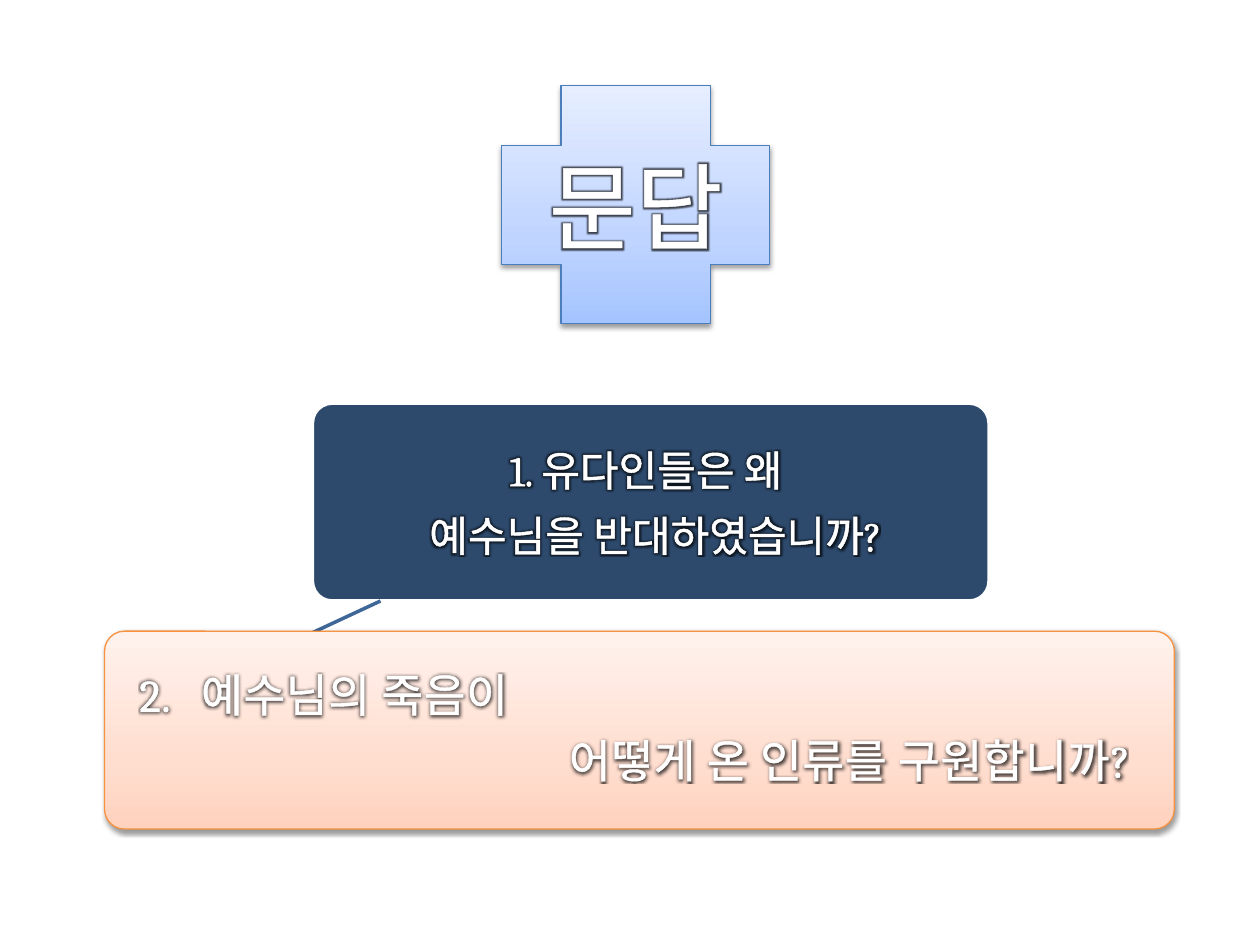
from dataclasses import dataclass

from lxml import etree
from pptx import Presentation
from pptx.dml.color import RGBColor
from pptx.enum import shapes, text
from pptx.oxml import ns
from pptx.util import Inches, Pt

COLORS = {
    "white": "FFFFFF", "black": "000000", "navy": "17375E", "link": "3F6797",
    "orange": "F69240", "blue": "4B7EBC",
}
PEACH = ((0, "FFD2BD"), (35, "FFDED0"), (100, "FFF2ED"))
SKY = ((0, "A4C4FF"), (35, "BFD4FF"), (100, "E6EEFF"))
FONT = "Cambria"
CENTER, LEFT = text.PP_ALIGN.CENTER, text.PP_ALIGN.LEFT


@dataclass(frozen=True)
class Line:
    words: str
    align: text.PP_ALIGN = CENTER
    left: float = 0
    hang: float = 0


@dataclass(frozen=True)
class Panel:
    preset: shapes.MSO_SHAPE
    place: tuple[float, float, float, float]
    border: str
    width: float
    size: float
    lines: tuple[Line, ...]
    stops: tuple[tuple[int, str], ...] = ()
    spacing: float = 1
    after: float = 0
    tracking: float = 0


FIRST = Panel(
    shapes.MSO_SHAPE.ROUNDED_RECTANGLE, (2.48, 3.2, 5.37, 1.57), "white", 2, 24,
    (Line("1. 유다인들은 왜 "), Line(" 예수님을 반대하였습니까?")), after=8.5)
SECOND = Panel(
    shapes.MSO_SHAPE.ROUNDED_RECTANGLE, (0.83, 5.01, 8.49, 1.57), "orange", 0.75, 26,
    (Line("2.\t예수님의 죽음이", LEFT, 0.72, 0.49),
     Line("어떻게 온 인류를 구원합니까?", LEFT, 3.64)), PEACH, 0.9, 9.5, 0.3)
TITLE = Panel(
    shapes.MSO_SHAPE.CROSS, (3.98, 0.68, 2.13, 1.89), "blue", 0.75, 54,
    (Line("문답"),), SKY)


def rgb(name: str) -> RGBColor:
    """Look up a named colour."""
    return RGBColor.from_string(COLORS[name])


def add_node(parent, tag: str, **attributes):
    """Append a drawing element with its attributes."""
    values = {key: str(value) for key, value in attributes.items()}
    return etree.SubElement(parent, ns.qn(f"a:{tag}"), values)


def add_color(parent, value: str, alpha: int = 100) -> None:
    """Append a colour with an opacity in percent."""
    color = add_node(parent, "srgbClr", val=value)
    if alpha < 100:
        add_node(color, "alpha", val=alpha * 1000)


def add_shadow(box) -> None:
    """Give a shape a soft shadow below it."""
    effects = box._element.spPr.find(ns.qn("a:effectLst"))
    shadow = add_node(effects, "outerShdw", blurRad=Pt(3.1), dist=Pt(1.6),
                      dir=90 * 60000, rotWithShape=0)
    add_color(shadow, COLORS["black"], 38)


def fill_gradient(box, stops: tuple[tuple[int, str], ...]) -> None:
    """Fill a shape with an upward gradient."""
    box.fill.gradient()
    box.fill.gradient_angle = 90
    listing = box.fill._fill._gradFill.find(ns.qn("a:gsLst"))
    for stop in list(listing):
        listing.remove(stop)
    for position, value in stops:
        add_color(add_node(listing, "gs", pos=position * 1000), value)


def style_span(span, panel: Panel) -> None:
    """Give a run white outlined letters with a soft dark edge."""
    span.font.size = Pt(panel.size)
    span.font.color.rgb = rgb("white")
    props = span.font._element
    if panel.tracking:
        props.set("spc", str(round(panel.tracking * 100)))
    outline = add_node(props, "ln", w=Pt(1.45))
    add_color(add_node(outline, "solidFill"), COLORS["white"])
    props.insert(0, outline)
    glow = add_node(add_node(props, "effectLst"), "glow", rad=Pt(3.5))
    add_color(glow, COLORS["black"], 70)
    span.font.name = FONT


def add_lines(box, panel: Panel) -> None:
    """Write the lines of a panel into its shape."""
    frame = box.text_frame
    frame.word_wrap = True
    frame.vertical_anchor = text.MSO_ANCHOR.MIDDLE
    frame.margin_left = frame.margin_right = 0
    frame.margin_top = frame.margin_bottom = 0
    for index, line in enumerate(panel.lines):
        para = frame.add_paragraph() if index else frame.paragraphs[0]
        para.alignment = line.align
        para.line_spacing = panel.spacing
        para.space_after = Pt(panel.after)
        props = para._p.get_or_add_pPr()
        props.set("marL", str(Inches(line.left)))
        props.set("indent", str(Inches(-line.hang)))
        span = para.add_run()
        span.text = line.words
        style_span(span, panel)


def add_panel(page, panel: Panel) -> None:
    """Draw one panel with its text."""
    box = page.shapes.add_shape(panel.preset, *map(Inches, panel.place))
    box.shadow.inherit = False
    if panel.preset == shapes.MSO_SHAPE.ROUNDED_RECTANGLE:
        box.adjustments[0] = 0.1
    box.line.color.rgb = rgb(panel.border)
    box.line.width = Pt(panel.width)
    if panel.stops:
        fill_gradient(box, panel.stops)
        add_shadow(box)
    else:
        box.fill.solid()
        box.fill.fore_color.rgb = rgb("navy")
        color = box._element.spPr.find(f"{ns.qn('a:solidFill')}/{ns.qn('a:srgbClr')}")
        add_node(color, "alpha", val=90000)
    add_lines(box, panel)


def add_link(page) -> None:
    """Draw the line that joins the two questions."""
    ends = map(Inches, (3.02, 4.77, 0.83, 5.79))
    link = page.shapes.add_connector(shapes.MSO_CONNECTOR.STRAIGHT, *ends)
    link.line.color.rgb = rgb("link")
    link.line.width = Pt(2)
    add_node(link._element.spPr, "effectLst")


def main() -> None:
    """Build the deck and save it."""
    deck = Presentation()
    deck.slide_width, deck.slide_height = Inches(10), Inches(7.5)
    page = deck.slides.add_slide(deck.slide_layouts[6])
    add_panel(page, FIRST)
    add_link(page)
    add_panel(page, SECOND)
    add_panel(page, TITLE)
    deck.save("out.pptx")


if __name__ == "__main__":
    main()
